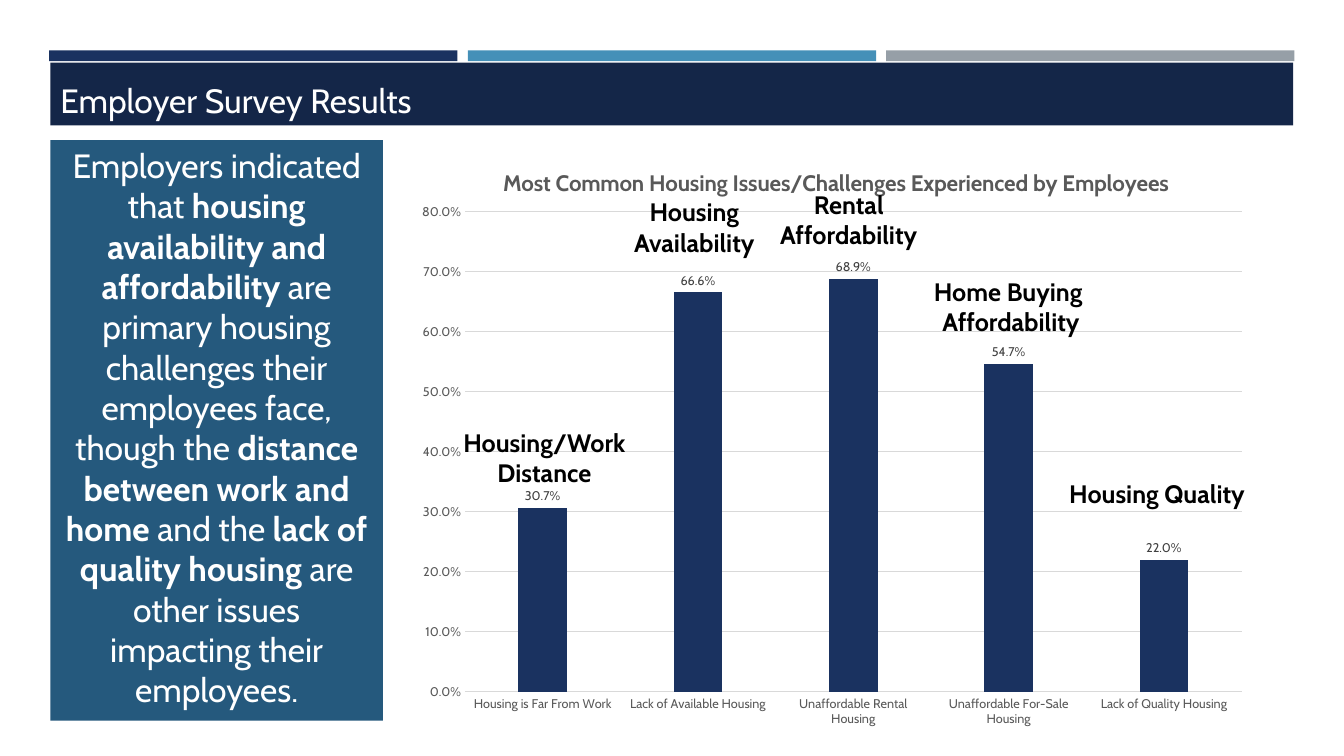
from lxml import etree
from pptx import Presentation
from pptx.chart import data
from pptx.dml import color
from pptx.enum import chart as charts, shapes, text
from pptx.oxml import ns
from pptx.util import Cm, Pt

COLORS = {
    "navy": "1A3260", "blue": "4590B8", "grey": "969FA7", "dark": "142648",
    "teal": "25597D", "white": "FFFFFF", "black": "000000",
    "axis": "595959", "label": "404040", "grid": "D9D9D9",
}
FONT = "Cabin"


def style_font(font, size, name, bold=False):
    for key, value in {"name": FONT, "size": Pt(size), "bold": bold}.items():
        setattr(font, key, value)
    font.color.rgb = color.RGBColor.from_string(COLORS[name])


def set_layout(element, **fractions):
    """Place a chart part by fractions of the chart's width and height."""
    for old in element.findall(ns.qn("c:layout")):
        element.remove(old)
    layout = etree.Element(ns.qn("c:layout"))
    manual = etree.SubElement(layout, ns.qn("c:manualLayout"))
    settings = {"xMode": "edge", "yMode": "edge", **fractions}
    if "w" in fractions:
        settings = {"layoutTarget": "inner", **settings}
    for key, value in settings.items():
        etree.SubElement(manual, ns.qn("c:" + key)).set("val", str(value))
    text_part = element.find(ns.qn("c:tx"))
    element.insert(0 if text_part is None else 1, layout)


presentation = Presentation()
presentation.slide_width, presentation.slide_height = Cm(33.87), Cm(19.05)
slide = presentation.slides.add_slide(presentation.slide_layouts[6])

# Accent bars, title band and summary panel
panels = {}
for name, left, top, width, height in [
    ("navy", 1.24, 1.27, 10.29, 0.27),
    ("blue", 11.79, 1.27, 10.29, 0.27),
    ("grey", 22.33, 1.27, 10.29, 0.27),
    ("dark", 1.27, 1.58, 31.32, 1.58),
    ("teal", 1.27, 3.53, 8.38, 14.63),
]:
    shape = slide.shapes.add_shape(
        shapes.MSO_SHAPE.RECTANGLE, Cm(left), Cm(top), Cm(width), Cm(height))
    shape.shadow.inherit = False
    shape.fill.solid()
    shape.fill.fore_color.rgb = color.RGBColor.from_string(COLORS[name])
    shape.line.fill.background()
    panels[name] = shape.text_frame

panels["dark"].vertical_anchor = text.MSO_ANCHOR.BOTTOM
paragraph = panels["dark"].paragraphs[0]
paragraph.alignment = text.PP_ALIGN.LEFT
paragraph.line_spacing = 0.85
run = paragraph.add_run()
run.text = "Employer Survey Results"
style_font(run.font, 24, "white")

panels["teal"].vertical_anchor = text.MSO_ANCHOR.TOP
panels["teal"].word_wrap = True
paragraph = panels["teal"].paragraphs[0]
paragraph.alignment = text.PP_ALIGN.CENTER
for wording, bold in [
    ("Employers indicated that ", False),
    ("housing availability and affordability", True),
    (" are primary housing challenges their employees face, though the ", False),
    ("distance between work and home ", True),
    ("and the ", False),
    ("lack of quality housing ", True),
    ("are other issues impacting their employees.", False),
]:
    run = paragraph.add_run()
    run.text = wording
    style_font(run.font, 24, "white", bold)

# Column chart
issues = data.CategoryChartData(number_format="0.0%")
issues.categories = [
    "Housing is Far From Work", "Lack of Available Housing",
    "Unaffordable Rental Housing", "Unaffordable For-Sale Housing",
    "Lack of Quality Housing",
]
issues.add_series("Series 1", [0.307, 0.666, 0.689, 0.547, 0.22])
chart = slide.shapes.add_chart(
    charts.XL_CHART_TYPE.COLUMN_CLUSTERED,
    Cm(10.21), Cm(3.53), Cm(21.51), Cm(15.11), issues).chart
style_font(chart.font, 10, "black")
chart.has_legend = False
chart.has_title = True
title = chart.chart_title
title.include_in_layout = False
run = title.text_frame.paragraphs[0].add_run()
run.text = "Most Common Housing Issues/Challenges Experienced by Employees"
style_font(run.font, 16, "axis", True)
plot_area = chart.plots[0]._element.getparent()
set_layout(title._element, x=0.11, y=0.04)
set_layout(plot_area, x=0.07, y=0.12, w=0.91, h=0.8)

plot = chart.plots[0]
plot.gap_width, plot.overlap = 219, -27
plot.vary_by_categories = False
series = plot.series[0]
series.format.fill.solid()
series.format.fill.fore_color.rgb = color.RGBColor.from_string(COLORS["navy"])
plot.has_data_labels = True
labels = plot.data_labels
for key, value in {
    "show_value": True, "number_format": "0.0%",
    "number_format_is_linked": False,
    "position": charts.XL_LABEL_POSITION.OUTSIDE_END,
}.items():
    setattr(labels, key, value)
style_font(labels.font, 9, "label")

value_axis, category_axis = chart.value_axis, chart.category_axis
for axis in (value_axis, category_axis):
    axis.major_tick_mark = axis.minor_tick_mark = charts.XL_TICK_MARK.NONE
    style_font(axis.tick_labels.font, 9, "axis")
for key, value in {
    "minimum_scale": 0, "maximum_scale": 0.8, "major_unit": 0.1,
    "has_major_gridlines": True,
}.items():
    setattr(value_axis, key, value)
value_axis.tick_labels.number_format = "0.0%"
value_axis.tick_labels.number_format_is_linked = False
value_axis.format.line.fill.background()
for line in (value_axis.major_gridlines.format.line, category_axis.format.line):
    line.color.rgb = color.RGBColor.from_string(COLORS["grid"])
    line.width = Pt(0.75)

# Callouts above the columns
for left, top, lines in [
    (14.96, 4.83, ["Housing Availability"]),
    (18.85, 4.65, ["Rental Affordability"]),
    (22.94, 6.83, ["Home Buying ", "Affordability"]),
    (11.18, 10.64, ["Housing/Work Distance"]),
    (26.62, 11.94, ["Housing Quality"]),
]:
    frame = slide.shapes.add_textbox(
        Cm(left), Cm(top), Cm(5.08), Cm(1.8)).text_frame
    frame.word_wrap = True
    frame.text = "\n".join(lines)
    for paragraph in frame.paragraphs:
        paragraph.alignment = text.PP_ALIGN.CENTER
        style_font(paragraph.runs[0].font, 18, "black", True)

presentation.save("out.pptx")
